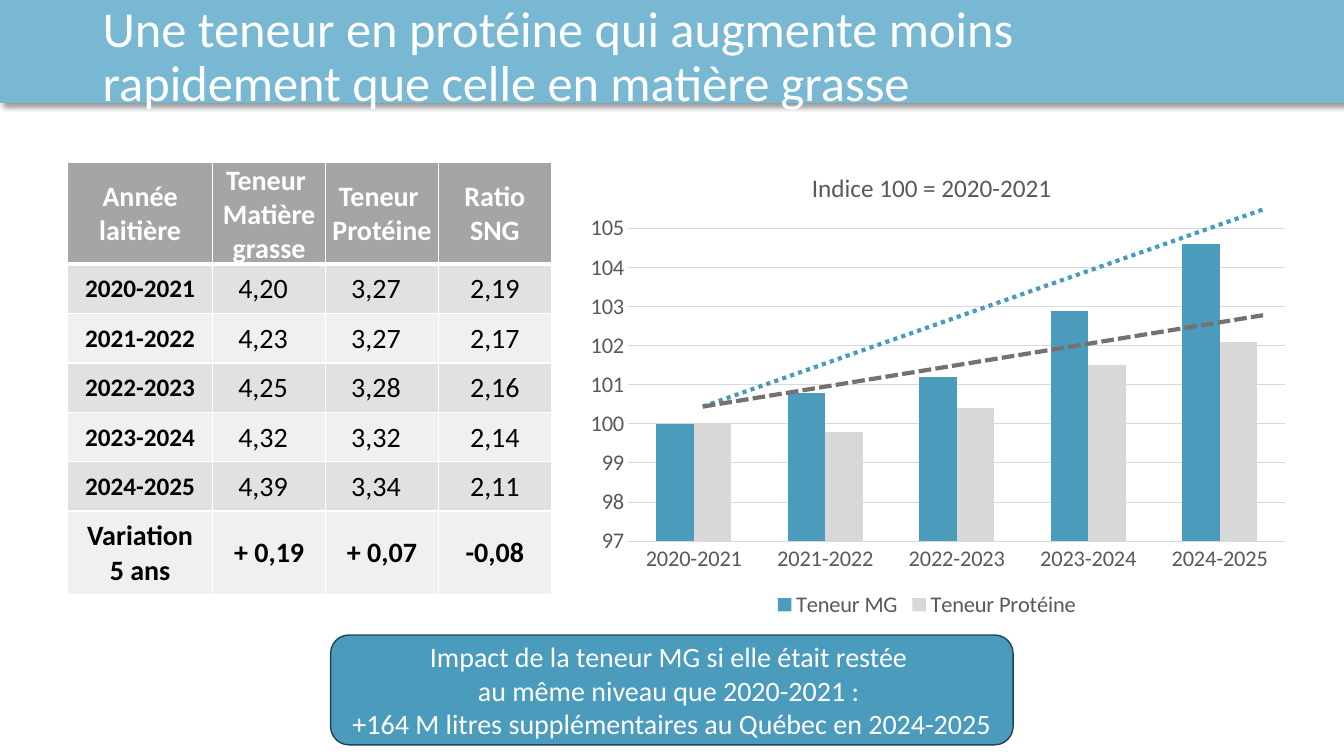
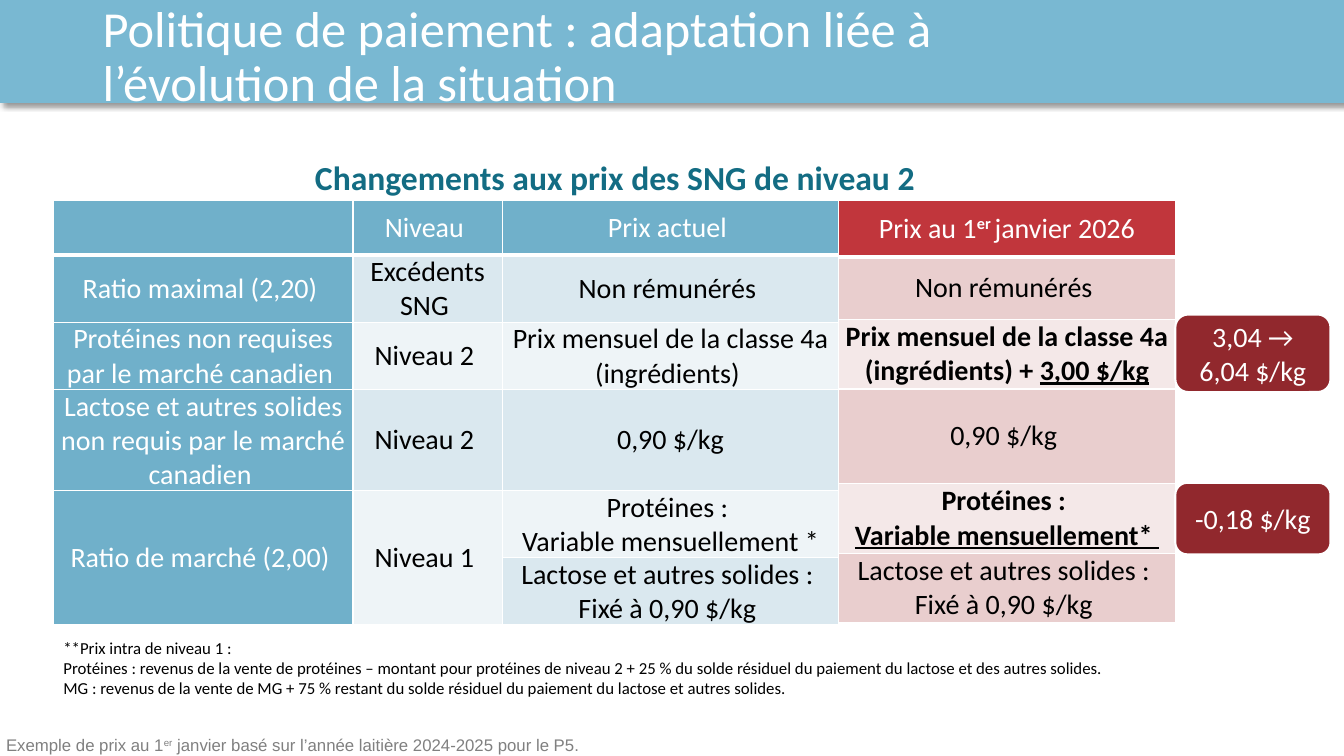
import lxml.etree
import pptx
import pptx.chart.data
import pptx.dml.color
import pptx.enum.chart
import pptx.enum.dml
import pptx.enum.shapes
import pptx.enum.text
import pptx.oxml.ns
import pptx.util

SLIDE_W, SLIDE_H = pptx.util.Inches(13.333), pptx.util.Inches(7.5)
Pt, Inches, qn = pptx.util.Pt, pptx.util.Inches, pptx.oxml.ns.qn
ALIGN, ANCHOR = pptx.enum.text.PP_ALIGN, pptx.enum.text.MSO_ANCHOR
SHAPE = pptx.enum.shapes.MSO_SHAPE
DASH = pptx.enum.dml.MSO_LINE

# Shared palette and font
FONT = "Calibri"
WHITE, BLACK, GREY_TEXT = "FFFFFF", "000000", "595959"
BAND, BLUE, BLUE_EDGE, TEAL = "79B8D2", "4A9BBC", "204452", "136C83"
GREY_HEAD, GREY_STRIPES = "A5A5A5", ("E1E1E1", "F0F0F0")
BLUE_HEAD, BLUE_STRIPES = "70B0CA", ("DAE8EF", "EEF4F7")
RED_HEAD, RED_STRIPES, RED_DARK = "C1363C", ("E9CECE", "F4E8E8"), "91282D"
GRID, BAR_GREY, TREND_GREY, SOURCE_GREY = "D9D9D9", "D8D8D8", "767171", "808080"


def rgb(code):
    return pptx.dml.color.RGBColor.from_string(code)


def area(x, y, w, h):
    """Box from percentages of the slide's width and height."""
    return (round(SLIDE_W * x / 100), round(SLIDE_H * y / 100),
            round(SLIDE_W * w / 100), round(SLIDE_H * h / 100))


def style_font(font, size, color, bold=False, name=FONT):
    font.size, font.bold, font.name = Pt(size), bold, name
    font.color.rgb = rgb(color)


def write(tf, paragraphs, size, color, bold=False, align=ALIGN.CENTER, name=FONT):
    """Each paragraph is a string or a list of (text, look) runs."""
    for i, runs in enumerate(paragraphs):
        p = tf.paragraphs[0] if i == 0 else tf.add_paragraph()
        p.alignment = align
        for text, look in [(runs, {})] if isinstance(runs, str) else runs:
            r = p.add_run()
            r.text = text
            style_font(r.font, size, color, look.get("bold", bold), name)
            if look.get("underline"):
                r.font.underline = True
            if look.get("raised"):
                r._r.get_or_add_rPr().set("baseline", "30000")


def add_text(slide, box, paragraphs, size, color, anchor=ANCHOR.TOP, **look):
    tf = slide.shapes.add_textbox(*box).text_frame
    tf.word_wrap, tf.vertical_anchor = True, anchor
    write(tf, paragraphs, size, color, **look)
    return tf


def add_box(slide, kind, box, fill, line, weight):
    sp = slide.shapes.add_shape(kind, *box)
    sp.shadow.inherit = False
    sp.fill.solid()
    sp.fill.fore_color.rgb = rgb(fill)
    sp.line.color.rgb = rgb(line)
    sp.line.width = Pt(weight)
    return sp


def add_callout(slide, box, paragraphs, fill, line, weight):
    sp = add_box(slide, SHAPE.ROUNDED_RECTANGLE, box, fill, line, weight)
    sp.text_frame.word_wrap = True
    sp.text_frame.vertical_anchor = ANCHOR.MIDDLE
    write(sp.text_frame, paragraphs, 20, WHITE)


def add_titled_slide(prs, title):
    slide = prs.slides.add_slide(prs.slide_layouts[6])
    # Band with its soft shadow
    band = add_box(slide, SHAPE.RECTANGLE, area(0, 0, 100, 13.6), BAND, BAND, 1)
    effects = band._element.spPr.find(qn("a:effectLst"))
    shadow = lxml.etree.SubElement(effects, qn("a:outerShdw"), blurRad="50800",
                                   dist="38100", dir="2700000", algn="tl")
    color = lxml.etree.SubElement(shadow, qn("a:srgbClr"), val=BLACK)
    lxml.etree.SubElement(color, qn("a:alpha"), val="40000")
    # Title
    tf = add_text(slide, area(6.9, 3.07, 78.15, 9.2), [title], 36, WHITE,
                  ANCHOR.MIDDLE, align=ALIGN.LEFT)
    tf.paragraphs[0].line_spacing = 0.9
    return slide


def border_cell(cell, bottom):
    tc_pr = cell._tc.get_or_add_tcPr()
    for side, weight in (("L", 1), ("R", 1), ("T", 1), ("B", bottom)):
        ln = lxml.etree.SubElement(tc_pr, qn("a:ln" + side), w=str(Pt(weight)))
        fill = lxml.etree.SubElement(ln, qn("a:solidFill"))
        lxml.etree.SubElement(fill, qn("a:srgbClr"), val=WHITE)


def add_grid(slide, box, cols, rows, cells, look, margin=0):
    """Table whose columns and rows share the box by weight.

    look(row, column) gives fill, size, colour, bold and extra right margin.
    """
    table = slide.shapes.add_table(len(rows), len(cols), *box).table
    table.first_row = table.horz_banding = False
    for col, weight in zip(table.columns, cols):
        col.width = round(box[2] * weight / sum(cols))
    for row, weight in zip(table.rows, rows):
        row.height = round(box[3] * weight / sum(rows))
    for i, line in enumerate(cells):
        for j, paragraphs in enumerate(line):
            cell = table.cell(i, j)
            fill, size, color, bold, extra = look(i, j)
            border_cell(cell, 3 if i == 0 else 1)
            cell.fill.solid()
            cell.fill.fore_color.rgb = rgb(fill)
            cell.vertical_anchor = ANCHOR.MIDDLE
            cell.margin_left = cell.margin_top = Inches(margin)
            cell.margin_right, cell.margin_bottom = Inches(margin + extra), 0
            write(cell.text_frame, paragraphs, size, color, bold)
    return table


def set_layout(parent, after, target=None, **shares):
    """Place a chart part by shares of the chart's size."""
    for old in parent.findall(qn("c:layout")):
        parent.remove(old)
    layout = lxml.etree.Element(qn("c:layout"))
    manual = lxml.etree.SubElement(layout, qn("c:manualLayout"))
    if target:
        lxml.etree.SubElement(manual, qn("c:layoutTarget"), val=target)
    for key in ("x", "y"):
        lxml.etree.SubElement(manual, qn(f"c:{key}Mode"), val="edge")
    for key, share in shares.items():
        lxml.etree.SubElement(manual, qn("c:" + key), val=str(share))
    if after is None:
        parent.insert(0, layout)
    else:
        after.addnext(layout)


def add_trend(slide, box, start, end, color, dash):
    x, y, w, h = box
    points = [round(v) for px, py in (start, end) for v in (x + w * px, y + h * py)]
    line = slide.shapes.add_connector(pptx.enum.shapes.MSO_CONNECTOR.STRAIGHT, *points)
    line.line.color.rgb = rgb(color)
    line.line.width = Pt(3)
    line.line.dash_style = dash
    lxml.etree.SubElement(line._element.spPr, qn("a:effectLst"))


def add_index_chart(slide, box):
    data = pptx.chart.data.CategoryChartData()
    data.categories = [f"{year}-{year + 1}" for year in range(2020, 2025)]
    data.add_series("Teneur MG", (100, 100.8, 101.2, 102.9, 104.6))
    data.add_series("Teneur Protéine", (100, 99.8, 100.4, 101.5, 102.1))
    kind = pptx.enum.chart.XL_CHART_TYPE.COLUMN_CLUSTERED
    chart = slide.shapes.add_chart(kind, *box, data).chart
    style_font(chart.font, 16, GREY_TEXT)

    # Title and plot area
    chart.has_title = True
    write(chart.chart_title.text_frame, ["Indice 100 = 2020-2021"], 18, GREY_TEXT)
    title = chart.chart_title._element
    set_layout(title, title.find(qn("c:tx")), x=0.34, y=0.05)
    set_layout(chart._chartSpace.chart.plotArea, None, "inner",
               x=0.1, y=0.18, w=0.88, h=0.65)

    # Columns
    plot = chart.plots[0]
    plot.gap_width, plot.overlap, plot.vary_by_categories = 150, 0, False
    for series, color in zip(plot.series, (BLUE, BAR_GREY)):
        series.format.fill.solid()
        series.format.fill.fore_color.rgb = rgb(color)

    # Axes
    values, years = chart.value_axis, chart.category_axis
    values.minimum_scale, values.maximum_scale, values.major_unit = 97, 105, 1
    values.tick_labels.number_format = "0"
    values.tick_labels.number_format_is_linked = False
    values.format.line.fill.background()
    for axis in (values, years):
        axis.major_tick_mark = pptx.enum.chart.XL_TICK_MARK.NONE
        style_font(axis.tick_labels.font, 16, GREY_TEXT)
    for line in (values.major_gridlines.format.line, years.format.line):
        line.color.rgb = rgb(GRID)
        line.width = Pt(0.75)

    # Legend
    chart.has_legend = True
    chart.legend.position = pptx.enum.chart.XL_LEGEND_POSITION.BOTTOM
    chart.legend.include_in_layout = False
    style_font(chart.legend.font, 16, GREY_TEXT)

    # Trend lines from a common start
    start = (0.2, 0.55)
    add_trend(slide, box, start, (0.95, 0.14), BLUE, DASH.ROUND_DOT)
    add_trend(slide, box, start, (0.95, 0.36), TREND_GREY, DASH.SQUARE_DOT)


def add_content_table(slide, box):
    head = [["Année laitière"], ["Teneur ", "Matière grasse"],
            ["Teneur ", "Protéine"], ["Ratio SNG"]]
    years = [("2020-2021", "4,20", "3,27", "2,19"), ("2021-2022", "4,23", "3,27", "2,17"),
             ("2022-2023", "4,25", "3,28", "2,16"), ("2023-2024", "4,32", "3,32", "2,14"),
             ("2024-2025", "4,39", "3,34", "2,11")]
    change = [["Variation", "5 ans"], ["+ 0,19"], ["+ 0,07"], ["-0,08"]]
    last = len(years) + 1

    def look(i, j):
        if i == 0:
            return GREY_HEAD, 20, WHITE, True, 0
        fill = GREY_STRIPES[(i - 1) % 2]
        if i == last:
            return fill, 20, BLACK, True, 0
        return fill, 18 if j == 0 else 20, BLACK, j == 0, 0.12 if j in (1, 2) else 0

    cells = [head] + [[[text] for text in row] for row in years] + [change]
    add_grid(slide, box, (1.44, 1.12, 1.12, 1.12), (0.83, *[0.49] * 5, 0.83),
             cells, look, margin=0.01)


def add_current_prices(slide, box):
    cells = [
        [[], ["Niveau "], ["Prix actuel "]],
        [["Ratio maximal (2,20) "], ["Excédents SNG "], ["Non rémunérés "]],
        [["Protéines non requises par le marché canadien "], ["Niveau 2 "],
         ["Prix mensuel de la classe 4a (ingrédients) "]],
        [["Lactose et autres solides non requis par le marché canadien "],
         ["Niveau 2 "], ["0,90 $/kg"]],
        [["Ratio de marché (2,00) "], ["Niveau 1 "],
         ["Protéines : ", "Variable mensuellement *"]],
        [[], [], ["Lactose et autres solides : ", "Fixé à 0,90 $/kg "]]]

    def look(i, j):
        if i == 0 or j == 0:
            return BLUE_HEAD, 20, WHITE, False, 0
        return BLUE_STRIPES[(i - 1) % 2], 20, BLACK, False, 0

    table = add_grid(slide, box, (2.97, 1.48, 3.34), (0.54, 0.6, 0.6, 0.9, 0.6, 0.6),
                     cells, look)
    for j in (0, 1):
        table.cell(4, j).merge(table.cell(5, j))


def add_new_prices(slide, box):
    strong, under = {"bold": True}, {"bold": True, "underline": True}
    cells = [
        [[[("Prix au 1", {}), ("er ", {"bold": True, "raised": True}),
           ("janvier 2026", {})]]],
        [["Non rémunérés "]],
        [[[("Prix mensuel de la classe 4a (ingrédients) + ", strong),
           ("3,00 $/kg", under)]]],
        [["0,90 $/kg "]],
        [[[("Protéines : ", strong)], [("Variable mensuellement* ", under)]]],
        [["Lactose et autres solides : ", "Fixé à 0,90 $/kg "]]]

    def look(i, j):
        if i == 0:
            return RED_HEAD, 20, WHITE, False, 0
        return RED_STRIPES[(i - 1) % 2], 20, BLACK, False, 0

    add_grid(slide, box, (1,), (0.56, 0.62, 0.69, 0.94, 0.69, 0.69), cells, look)


def build_content_slide(prs):
    slide = add_titled_slide(prs, "Une teneur en protéine qui augmente moins "
                                  "rapidement que celle en matière grasse")
    add_index_chart(slide, area(41.18, 18.8, 55.58, 63.6))
    add_content_table(slide, area(5.03, 21.47, 36, 54.8))
    add_callout(slide, area(24.6, 84, 50.78, 14.53),
                ["Impact de la teneur MG si elle était restée ",
                 "au même niveau que 2020-2021 : ",
                 "+164 M litres supplémentaires au Québec en 2024-2025"], BLUE, BLUE_EDGE, 1)


def build_payment_slide(prs):
    slide = add_titled_slide(prs, "Politique de paiement : adaptation liée à "
                                  "l’évolution de la situation")
    add_text(slide, area(3.98, 20.13, 83.55, 6.67),
             ["Changements aux prix des SNG de niveau 2"], 24, TEAL, bold=True)
    add_current_prices(slide, area(3.98, 26.53, 58.45, 51.2))
    add_new_prices(slide, area(62.4, 26.53, 25.05, 55.87))
    # Price effects beside the new prices
    for y, h, text in ((41.6, 10.27, "3,04 → 6,04 $/kg"), (63.87, 9.47, "-0,18 $/kg")):
        add_callout(slide, area(87.45, y, 11.55, h), [text], RED_DARK, WHITE, 1.5)
    # Notes and source
    add_text(slide, area(3.98, 83.6, 85.13, 9.47),
             ["**Prix intra de niveau 1 :",
              "Protéines : revenus de la vente de protéines – montant pour protéines de niveau 2 "
              "+ 25 % du solde résiduel du paiement du lactose et des autres solides.",
              "MG : revenus de la vente de MG + 75 % restant du solde résiduel du paiement "
              "du lactose et autres solides."], 12, BLACK, ANCHOR.MIDDLE, align=ALIGN.LEFT)
    tf = add_text(slide, area(0, 96.53, 71, 3.47),
                  [[("Exemple de prix au 1", {}), ("er", {"raised": True}),
                    (" janvier basé sur l’année laitière 2024-2025 pour le P5.", {})]],
                  12, SOURCE_GREY, align=ALIGN.LEFT, name="Arial")
    tf.margin_left = Inches(0.06)


def main():
    prs = pptx.Presentation()
    prs.slide_width, prs.slide_height = SLIDE_W, SLIDE_H
    build_content_slide(prs)
    build_payment_slide(prs)
    prs.save("out.pptx")


if __name__ == "__main__":
    main()
